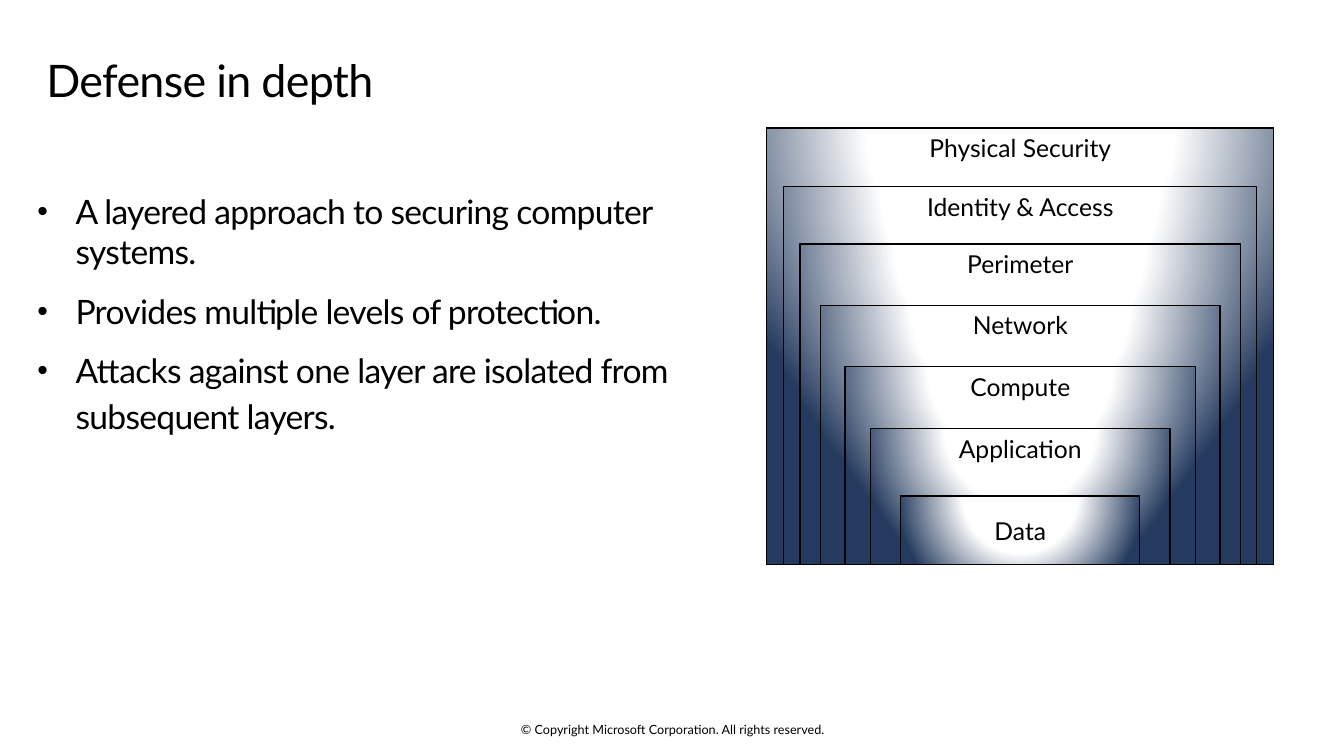
import pptx
import pptx.dml.color
import pptx.enum.shapes
import pptx.enum.text
import pptx.oxml
import pptx.oxml.ns
import pptx.util
from pptx.util import Inches

COLORS = {"text": "000000", "outline": "000000", "glow": "FFFFFF", "navy": "243A5E"}
FONT = "Lato"
ALIGN = pptx.enum.text.PP_ALIGN
ANCHOR = pptx.enum.text.MSO_ANCHOR

# Nested layers from outermost to innermost: label, top, width in inches
LAYERS = [
    ("Physical Security", 1.27, 5.03),
    ("Identity & Access", 1.85, 4.69),
    ("Perimeter", 2.42, 4.37),
    ("Network", 3.03, 3.96),
    ("Compute", 3.64, 3.48),
    ("Application", 4.25, 2.97),
    ("Data", 4.92, 2.37),
]
LAYERS_CENTER, LAYERS_BOTTOM = 10.12, 5.6

# Bullet text and line spacing
POINTS = [
    ("A layered approach to securing computer systems.", 1.0),
    ("Provides multiple levels of protection.", 1.14),
    ("Attacks against one layer are isolated from subsequent layers.", 1.14),
]


def xml(markup):
    namespace = pptx.oxml.ns.nsdecls("a")
    return pptx.oxml.parse_xml(markup.replace(">", f" {namespace}>", 1)
                               if "/>" not in markup.split(">")[0] + ">"
                               else markup.replace("/>", f" {namespace}/>", 1))


def write(paragraph, text, size, align=ALIGN.LEFT, tracking=0, spacing=1.0,
          before=0, after=0):
    paragraph.alignment = align
    paragraph.line_spacing = spacing
    paragraph.space_before = pptx.util.Pt(before)
    paragraph.space_after = pptx.util.Pt(after)
    run = paragraph.add_run()
    run.text = text
    run.font.name = FONT
    run.font.size = pptx.util.Pt(size)
    run.font.color.rgb = pptx.dml.color.RGBColor.from_string(COLORS["text"])
    if tracking:
        run.font._element.set("spc", str(round(tracking * 100)))


def place(box, left, top, width, height):
    box.left, box.top = Inches(left), Inches(top)
    box.width, box.height = Inches(width), Inches(height)


def set_frame(frame, anchor, left=0, top=0, right=0, bottom=0):
    frame.word_wrap = True
    frame.auto_size = pptx.enum.text.MSO_AUTO_SIZE.NONE
    frame.vertical_anchor = anchor
    frame.margin_left, frame.margin_right = Inches(left), Inches(right)
    frame.margin_top, frame.margin_bottom = Inches(top), Inches(bottom)


def add_bullet(paragraph):
    properties = paragraph._p.get_or_add_pPr()
    properties.set("marL", str(Inches(0.38)))
    properties.set("indent", str(Inches(-0.38)))
    for markup in ('<a:buSzPct val="90000"/>', '<a:buFont typeface="Arial"/>',
                   '<a:buChar char="•"/>'):
        properties.append(xml(markup))


def add_title(slide, text):
    title = slide.shapes.title
    place(title, 0.46, 0.48, 12.4, 0.74)
    set_frame(title.text_frame, ANCHOR.TOP, top=0.1, right=0.16, bottom=0.1)
    write(title.text_frame.paragraphs[0], text, 32, tracking=-0.5, spacing=0.9)


def add_points(slide, points):
    body = slide.placeholders[1]
    place(body, 0.37, 1.79, 6.7, 4.24)
    frame = body.text_frame
    set_frame(frame, ANCHOR.TOP, top=0.1, right=0.16, bottom=0.1)
    for index, (text, spacing) in enumerate(points):
        paragraph = frame.add_paragraph() if index else frame.paragraphs[0]
        add_bullet(paragraph)
        write(paragraph, text, 24, tracking=-0.5, spacing=spacing,
              before=3.9 if index else 0, after=5.9)


def fill_with_glow(shape):
    """Circular gradient centred above the layer, white turning to navy."""
    stops = "".join(
        f'<a:gs pos="{percent * 1000}"><a:srgbClr val="{COLORS[name]}"/></a:gs>'
        for percent, name in ((0, "glow"), (46, "glow"), (100, "navy")))
    gradient = xml(
        f'<a:gradFill rotWithShape="1"><a:gsLst>{stops}</a:gsLst><a:path path="circle">'
        '<a:fillToRect l="50000" t="-80000" r="50000" b="180000"/>'
        '</a:path></a:gradFill>')
    shape._element.spPr.find(pptx.oxml.ns.qn("a:prstGeom")).addnext(gradient)


def add_layer(group, label, top, width, anchor):
    layer = group.shapes.add_shape(
        pptx.enum.shapes.MSO_SHAPE.RECTANGLE,
        Inches(LAYERS_CENTER - width / 2), Inches(top),
        Inches(width), Inches(LAYERS_BOTTOM - top))
    layer.shadow.inherit = False
    fill_with_glow(layer)
    layer.line.color.rgb = pptx.dml.color.RGBColor.from_string(COLORS["outline"])
    layer.line.width = pptx.util.Pt(0.85)
    set_frame(layer.text_frame, anchor, 0.1, 0.05, 0.1, 0.05)
    write(layer.text_frame.paragraphs[0], label, 17.6, align=ALIGN.CENTER)


def add_copyright(slide, text):
    notice = slide.shapes.add_textbox(Inches(4.42), Inches(7.16), Inches(4.5), Inches(0.15))
    set_frame(notice.text_frame, ANCHOR.MIDDLE)
    write(notice.text_frame.paragraphs[0], text, 9, align=ALIGN.CENTER)


def main():
    deck = pptx.Presentation()
    deck.slide_width, deck.slide_height = Inches(13.33), Inches(7.5)
    slide = deck.slides.add_slide(deck.slide_layouts[1])

    # Title and key points
    add_title(slide, "Defense in depth")
    add_points(slide, POINTS)

    # Nested security layers; only the core is centred vertically
    layers = slide.shapes.add_group_shape()
    for label, top, width in LAYERS:
        anchor = ANCHOR.MIDDLE if label == "Data" else ANCHOR.TOP
        add_layer(layers, label, top, width, anchor)

    # Footer
    add_copyright(slide, "© Copyright Microsoft Corporation. All rights reserved.")
    deck.save("out.pptx")


if __name__ == "__main__":
    main()
